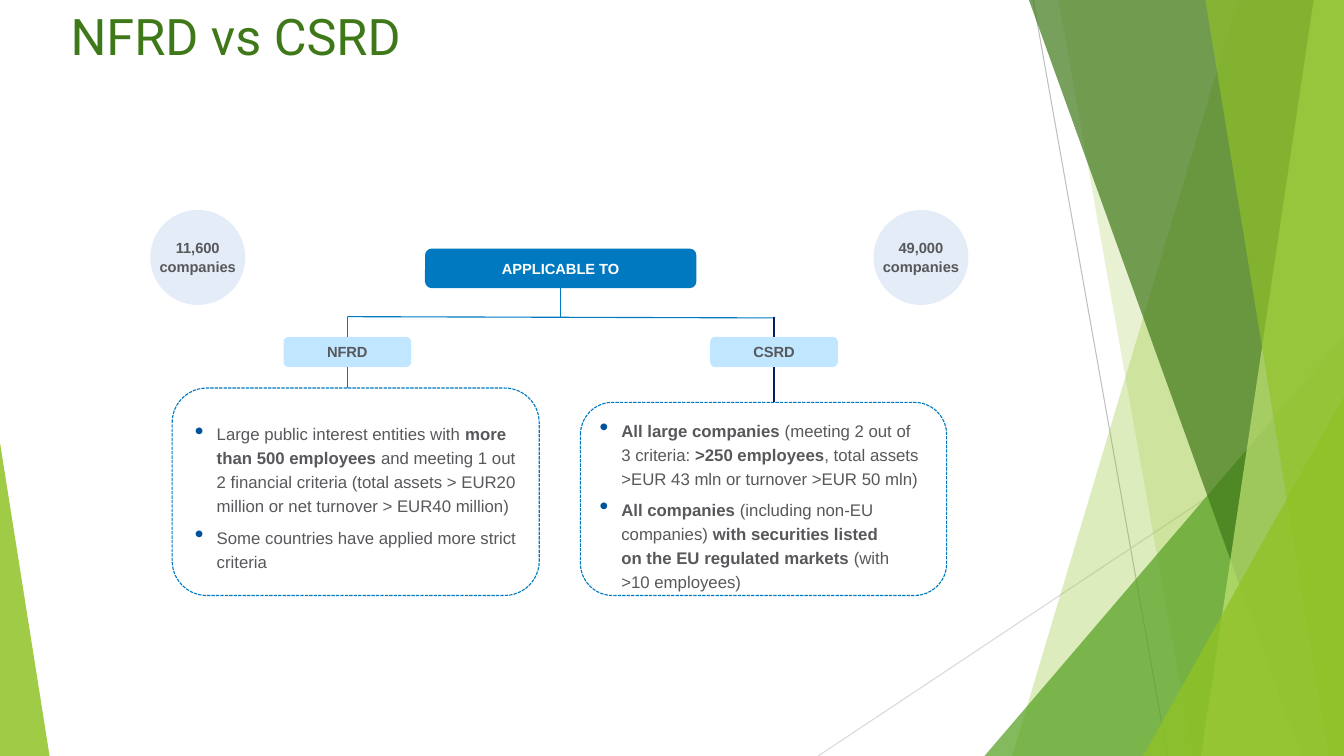
from dataclasses import dataclass

from lxml.etree import SubElement
from pptx import Presentation
from pptx.dml.color import RGBColor
from pptx.enum.dml import MSO_LINE_DASH_STYLE as Dash
from pptx.enum.shapes import MSO_CONNECTOR, MSO_SHAPE as Shp
from pptx.enum.text import MSO_ANCHOR as Anchor, MSO_AUTO_SIZE as AutoSize, PP_ALIGN as Align
from pptx.oxml.ns import qn
from pptx.util import Emu, Inches, Pt

COLS, ROWS = 160, 90
CELL = Inches(7.5) // ROWS
BLUE, NAVY, PALE, MIST = "0079C1", "001F5F", "C0E7FF", "E4ECF7"
GREY, WHITE, GREEN, LIME = "57585B", "FFFFFF", "3F7819", "90C226"
BUS, FLOOR = 37.7, 70.9


@dataclass
class Facet:
    points: list[tuple[float, float]]
    color: str
    alpha: int


@dataclass
class Wedge:
    left: float
    top: float
    width: float
    apex: float
    color: str
    alpha: int


@dataclass
class Bullet:
    runs: list[tuple[str, bool]]
    before: float
    right: float = 0


@dataclass
class Branch:
    name: str
    count: str
    circle: float
    label: float
    box: tuple[float, float, float]
    inset: tuple[float, float, float]
    line: str
    bullets: list[Bullet]


BACK = [
    Facet([(147.4, 0), (160, 0), (160, 90), (120.5, 90)], LIME, 30),
    Facet([(126, 0), (160, 0), (160, 90), (142, 90)], LIME, 20),
    Wedge(117.2, 40, 42.8, 1, "54A021", 72),
    Facet([(122.5, 0), (160, 0), (160, 90), (154.9, 90)], GREEN, 70),
    Facet([(156.4, 0), (160, 0), (160, 90), (143, 90)], "C0E474", 70),
    Facet([(143.5, 0), (160, 0), (160, 90), (158.2, 90)], LIME, 65),
    Wedge(136.1, 47.2, 23.9, 1, LIME, 80),
    Wedge(0, 52.7, 5.9, 0, LIME, 85),
]
BRANCHES = [
    Branch("NFRD", "11,600", 17.9, 33.75, (20.5, 46.2, 43.7), (1.3, 2.6, 0.84), BLUE, [
        Bullet([("Large public interest entities with ", False), ("more than 500 employees ", True),
                ("and meeting 1 out 2 financial criteria (total assets > EUR20 million "
                 "or net turnover > EUR40 million)", False)], 1.2),
        Bullet([("Some countries have applied more strict criteria", False)], 5.6)]),
    Branch("CSRD", "49,000", 104, 84.55, (69.1, 47.9, 43.6), (0.95, 0.6, 1.6), NAVY, [
        Bullet([("All large companies ", True), ("(meeting 2 out of 3 criteria: ", False),
                (">250 employees", True),
                (", total assets >EUR 43 mln or turnover >EUR 50 mln)", False)], 1),
        Bullet([("All companies ", True), ("(including non-EU companies) ", False),
                ("with securities listed on the EU regulated markets ", True),
                ("(with >10 employees)", False)], 5.1, 3.2)]),
]


def g(n: float) -> Emu:
    """Turn grid cells into a length."""
    return Emu(round(n * CELL))


def rgb(color: str) -> RGBColor:
    """Turn a hex string into a colour."""
    return RGBColor.from_string(color)


def paint(sp, color: str, alpha: int = 100) -> None:
    """Fill a shape flat, without line or shadow."""
    sp.shadow.inherit = False
    sp.fill.solid()
    sp.fill.fore_color.rgb = rgb(color)
    sp.line.fill.background()
    if alpha < 100:
        clr = sp.fill._xPr.find(qn("a:solidFill"))[0]
        SubElement(clr, qn("a:alpha")).set("val", str(alpha * 1000))


def style(r, size: float, color: str, bold: bool = False, font: str = "Arial") -> None:
    """Format one run."""
    r.font.name, r.font.size, r.font.bold = font, Pt(size), bold
    r.font.color.rgb = rgb(color)


def line(s, x1: float, y1: float, x2: float, y2: float, color: str, width: float = 0.8):
    """Draw a straight connector between two grid points."""
    cx = s.shapes.add_connector(MSO_CONNECTOR.STRAIGHT, g(x1), g(y1), g(x2), g(y2))
    cx.line.color.rgb = rgb(color)
    cx.line.width = Pt(width)
    SubElement(cx._element.spPr, qn("a:effectLst"))
    return cx


def block(s, kind, left: float, top: float, width: float, height: float, fill: str):
    """Draw a filled preset shape with no text margins."""
    sp = s.shapes.add_shape(kind, g(left), g(top), g(width), g(height))
    paint(sp, fill)
    tf = sp.text_frame
    tf.margin_left = tf.margin_right = tf.margin_top = tf.margin_bottom = 0
    return sp


def caption(sp, text: str, color: str) -> None:
    """Centre bold text on a shape, one paragraph per line."""
    tf = sp.text_frame
    tf.text = text
    tf.word_wrap = False
    tf.vertical_anchor = Anchor.MIDDLE
    for i, p in enumerate(tf.paragraphs):
        p.alignment = Align.CENTER
        p.space_before = Pt(1.1 if i else 0)
        for r in p.runs:
            style(r, 10.5, color, True)


def backdrop(s) -> None:
    """Draw the thin lines and the green facets."""
    line(s, 123, 0, 139, ROWS, "BFBFBF", 0.75)
    line(s, COLS, 48.4, 97.4, ROWS, "D9D9D9", 0.75)
    for item in BACK:
        if isinstance(item, Facet):
            first, *rest = [(g(x), g(y)) for x, y in item.points]
            fb = s.shapes.build_freeform(*first)
            fb.add_line_segments(rest)
            sp = fb.convert_to_shape()
        else:
            sp = s.shapes.add_shape(Shp.ISOSCELES_TRIANGLE, g(item.left), g(item.top),
                                    g(item.width), g(ROWS - item.top))
            sp.adjustments[0] = item.apex
        paint(sp, item.color, item.alpha)


def heading(s, text: str) -> None:
    """Place and format the title."""
    sp = s.shapes.title
    sp.left, sp.top, sp.width, sp.height = g(0), g(0), g(112.8), g(7.9)
    tf = sp.text_frame
    tf.text = text
    tf.auto_size = AutoSize.NONE
    tf.vertical_anchor = Anchor.TOP
    tf.margin_left, tf.margin_top, tf.margin_right, tf.margin_bottom = g(8.4), g(0.6), 0, 0
    p = tf.paragraphs[0]
    p.alignment = Align.LEFT
    p.space_before = Pt(1.1)
    style(p.runs[0], 36, GREEN, font="Roboto")


def write_bullets(tf, bullets: list[Bullet]) -> None:
    """Write bulleted paragraphs of mixed weight."""
    for i, b in enumerate(bullets):
        p = tf.add_paragraph() if i else tf.paragraphs[0]
        p.alignment = Align.LEFT
        p.line_spacing, p.space_before = 1.19, Pt(b.before)
        ppr = p._p.get_or_add_pPr()
        for key, cells in (("marL", 2.8), ("marR", b.right), ("indent", -2.6)):
            ppr.set(key, str(g(cells)))
        SubElement(SubElement(ppr, qn("a:buClr")), qn("a:srgbClr")).set("val", "00529B")
        SubElement(ppr, qn("a:buSzPct")).set("val", "154000")
        SubElement(ppr, qn("a:buChar")).set("char", "•")
        for text, bold in b.runs:
            r = p.add_run()
            r.text = text
            style(r, 12, GREY, bold)


def branch(s, b: Branch) -> None:
    """Draw one directive: count, label, details and joining lines."""
    caption(block(s, Shp.OVAL, b.circle, 25, 11.3, 11.3, MIST), f"{b.count}\ncompanies", GREY)
    label = block(s, Shp.ROUNDED_RECTANGLE, b.label, 40.1, 15.2, 3.6, PALE)
    caption(label, b.name, GREY)
    left, top, width = b.box
    box = block(s, Shp.ROUNDED_RECTANGLE, left, top, width, FLOOR - top, WHITE)
    box.line.color.rgb, box.line.width = rgb(BLUE), Pt(0.8)
    box.line.dash_style = Dash.SQUARE_DOT
    tf = box.text_frame
    tf.word_wrap, tf.vertical_anchor = True, Anchor.TOP
    tf.margin_left, tf.margin_top, tf.margin_right = map(g, b.inset)
    write_bullets(tf, b.bullets)
    mid = b.label + 7.6
    line(s, mid, BUS, mid, 40.1, b.line).end_connect(label, 0)
    line(s, mid, 43.7, mid, top, b.line).begin_connect(label, 2)


def main() -> None:
    """Build the slide and save it."""
    prs = Presentation()
    prs.slide_width, prs.slide_height = g(COLS), g(ROWS)
    s = prs.slides.add_slide(prs.slide_layouts[5])
    backdrop(s)
    heading(s, "NFRD vs CSRD")
    header = block(s, Shp.ROUNDED_RECTANGLE, 50.6, 29.6, 32.3, 4.7, BLUE)
    caption(header, "APPLICABLE TO", WHITE)
    line(s, 66.75, 34.3, 66.75, BUS, BLUE).begin_connect(header, 2)
    line(s, BRANCHES[0].label + 7.6, BUS, BRANCHES[1].label + 7.6, BUS + 0.15, BLUE)
    for b in BRANCHES:
        branch(s, b)
    prs.save("out.pptx")


if __name__ == "__main__":
    main()
